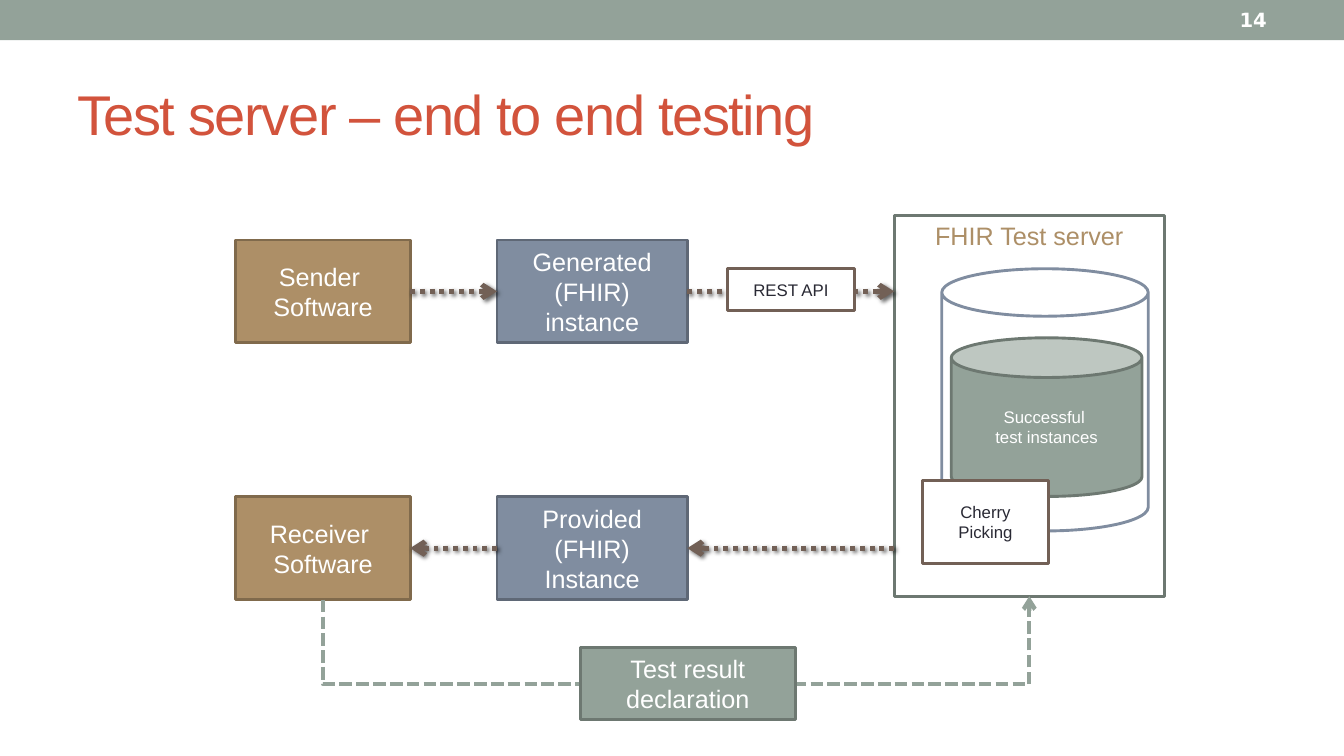
import lxml.etree
import pptx
import pptx.dml.color
import pptx.enum.dml
import pptx.enum.shapes
import pptx.enum.text
import pptx.oxml
import pptx.oxml.ns
import pptx.util

Pt = pptx.util.Pt
RGBColor = pptx.dml.color.RGBColor
Shape = pptx.enum.shapes.MSO_SHAPE
Connector = pptx.enum.shapes.MSO_CONNECTOR
Dash = pptx.enum.dml.MSO_LINE
Align = pptx.enum.text.PP_ALIGN
Anchor = pptx.enum.text.MSO_ANCHOR
qn = pptx.oxml.ns.qn

WHITE = RGBColor(0xFF, 0xFF, 0xFF)
INK = RGBColor(0x29, 0x29, 0x34)
RED = RGBColor(0xD2, 0x53, 0x3C)
GREEN = RGBColor(0x93, 0xA2, 0x99)
DARK_GREEN = RGBColor(0x6D, 0x78, 0x71)
TAN = RGBColor(0xAD, 0x8F, 0x67)
DARK_TAN = RGBColor(0x80, 0x6A, 0x4C)
BLUE = RGBColor(0x80, 0x8D, 0xA0)
DARK_BLUE = RGBColor(0x5F, 0x68, 0x76)
BROWN = RGBColor(0x72, 0x60, 0x56)

SOFTWARE_LEFT, SOFTWARE_WIDTH = 168.5, 124.5
INSTANCE_LEFT, INSTANCE_WIDTH = 355, 136
SERVER_LEFT = 638.7
ROW_HEIGHT = 73.5
SHADOW = (
    '<a:effectLst xmlns:a="http://schemas.openxmlformats.org/drawingml/2006/main">'
    '<a:outerShdw blurRad="38100" dist="25400" dir="2700000" rotWithShape="0">'
    '<a:srgbClr val="000000"><a:alpha val="60000"/></a:srgbClr>'
    '</a:outerShdw></a:effectLst>'
)


def write_text(shape, text, size=18, color=WHITE, font="Arial", bold=False,
               align=Align.CENTER, anchor=Anchor.MIDDLE, spacing=None):
    frame = shape.text_frame
    frame.word_wrap = True
    frame.vertical_anchor = anchor
    for index, line in enumerate(text.split("\n")):
        paragraph = frame.add_paragraph() if index else frame.paragraphs[0]
        paragraph.alignment = align
        run = paragraph.add_run()
        run.text = line
        run.font.size = Pt(size)
        run.font.name = font
        run.font.bold = bold
        run.font.color.rgb = color
        if spacing is not None:
            run.font._element.set("spc", str(round(spacing * 100)))


def add_label(slide, box, text, **text_format):
    label = slide.shapes.add_textbox(*map(Pt, box))
    write_text(label, text, **text_format)


def add_block(slide, box, fill, outline, text="", kind=Shape.RECTANGLE,
              bulge=None, **text_format):
    shape = slide.shapes.add_shape(kind, *map(Pt, box))
    shape.shadow.inherit = False
    if fill is None:
        shape.fill.background()
    else:
        shape.fill.solid()
        shape.fill.fore_color.rgb = fill
    if outline is None:
        shape.line.fill.background()
    else:
        shape.line.color.rgb = outline
        shape.line.width = Pt(2.08)
    if bulge is not None:
        shape.adjustments[0] = bulge
    if text:
        write_text(shape, text, **text_format)


def add_arrow(slide, kind, start, end, color, width, dash):
    arrow = slide.shapes.add_connector(kind, *map(Pt, start + end))
    arrow.line.color.rgb = color
    arrow.line.width = Pt(width)
    arrow.line.dash_style = dash
    line = arrow.line._get_or_add_ln()
    lxml.etree.SubElement(line, qn("a:tailEnd")).set("type", "arrow")
    return arrow._element.spPr


def add_flow_arrow(slide, start_x, end_x, y):
    properties = add_arrow(slide, Connector.STRAIGHT, (start_x, y), (end_x, y),
                           BROWN, 3.5, Dash.ROUND_DOT)
    properties.append(pptx.oxml.parse_xml(SHADOW))


def add_return_arrow(slide, start, end, drop):
    center_x, center_y = (start[0] + end[0]) / 2, (start[1] + end[1]) / 2
    half_span, half_rise = (end[0] - start[0]) / 2, (start[1] - end[1]) / 2
    properties = add_arrow(
        slide, Connector.ELBOW,
        (center_x + half_rise, center_y + half_span),
        (center_x - half_rise, center_y - half_span),
        GREEN, 3, Dash.SQUARE_DOT)
    properties.find(qn("a:xfrm")).set("rot", "5400000")
    guides = properties.find(qn("a:prstGeom")).get_or_add_avLst()
    guide = lxml.etree.SubElement(guides, qn("a:gd"))
    guide.set("name", "adj1")
    guide.set("fmla", f"val {round(-drop / (2 * half_rise) * 100000)}")
    lxml.etree.SubElement(properties, qn("a:effectLst"))


def add_row(slide, top, software, instance):
    add_block(slide, (SOFTWARE_LEFT, top, SOFTWARE_WIDTH, ROW_HEIGHT),
              TAN, DARK_TAN, software)
    add_block(slide, (INSTANCE_LEFT, top, INSTANCE_WIDTH, ROW_HEIGHT),
              BLUE, DARK_BLUE, instance)


def main():
    presentation = pptx.Presentation()
    presentation.slide_width = Pt(960)
    presentation.slide_height = Pt(540)
    slide = presentation.slides.add_slide(presentation.slide_layouts[6])

    add_block(slide, (0, 0, 960, 28.8), GREEN, None)
    add_label(slide, (48, 42, 864, 78), "Test server – end to end testing",
              size=40, color=RED, align=Align.LEFT, spacing=-1)
    add_label(slide, (800, 1.4, 112, 26), "14", size=14, font="DejaVu Sans",
              bold=True, align=Align.RIGHT)

    add_block(slide, (SERVER_LEFT, 154, 193, 272), None, DARK_GREEN,
              "FHIR Test server", color=TAN, anchor=Anchor.TOP)

    software_right = SOFTWARE_LEFT + SOFTWARE_WIDTH
    instance_right = INSTANCE_LEFT + INSTANCE_WIDTH
    send_top, receive_top = 171.4, 354.8
    send_y, receive_y = send_top + ROW_HEIGHT / 2, receive_top + ROW_HEIGHT / 2
    add_row(slide, send_top, "Sender \nSoftware", "Generated\n(FHIR) instance")
    add_flow_arrow(slide, software_right, INSTANCE_LEFT, send_y)
    add_flow_arrow(slide, instance_right, SERVER_LEFT, send_y)
    add_row(slide, receive_top, "Receiver \nSoftware",
            "Provided\n(FHIR) Instance")
    add_flow_arrow(slide, INSTANCE_LEFT, software_right, receive_y)
    add_flow_arrow(slide, SERVER_LEFT, instance_right, receive_y)

    add_block(slide, (672.7, 192, 147.5, 187.3), WHITE, BLUE,
              kind=Shape.CAN, bulge=0.23)
    add_block(slide, (679.5, 241.3, 136.3, 113.3), GREEN, DARK_GREEN,
              "Successful \ntest instances", kind=Shape.CAN, bulge=0.25, size=12)
    add_block(slide, (519.5, 192, 91, 29.7), WHITE, BROWN, "REST API",
              size=12, color=INK)
    add_block(slide, (658.7, 343, 90.5, 59.5), WHITE, BROWN, "Cherry Picking",
              size=12, color=INK)

    add_return_arrow(slide, (230.75, 428.4), (735.25, 425.9), 60.5)
    add_block(slide, (414.5, 462.6, 153.7, 51.5), GREEN, DARK_GREEN,
              "Test result declaration")

    presentation.save("out.pptx")


if __name__ == "__main__":
    main()
